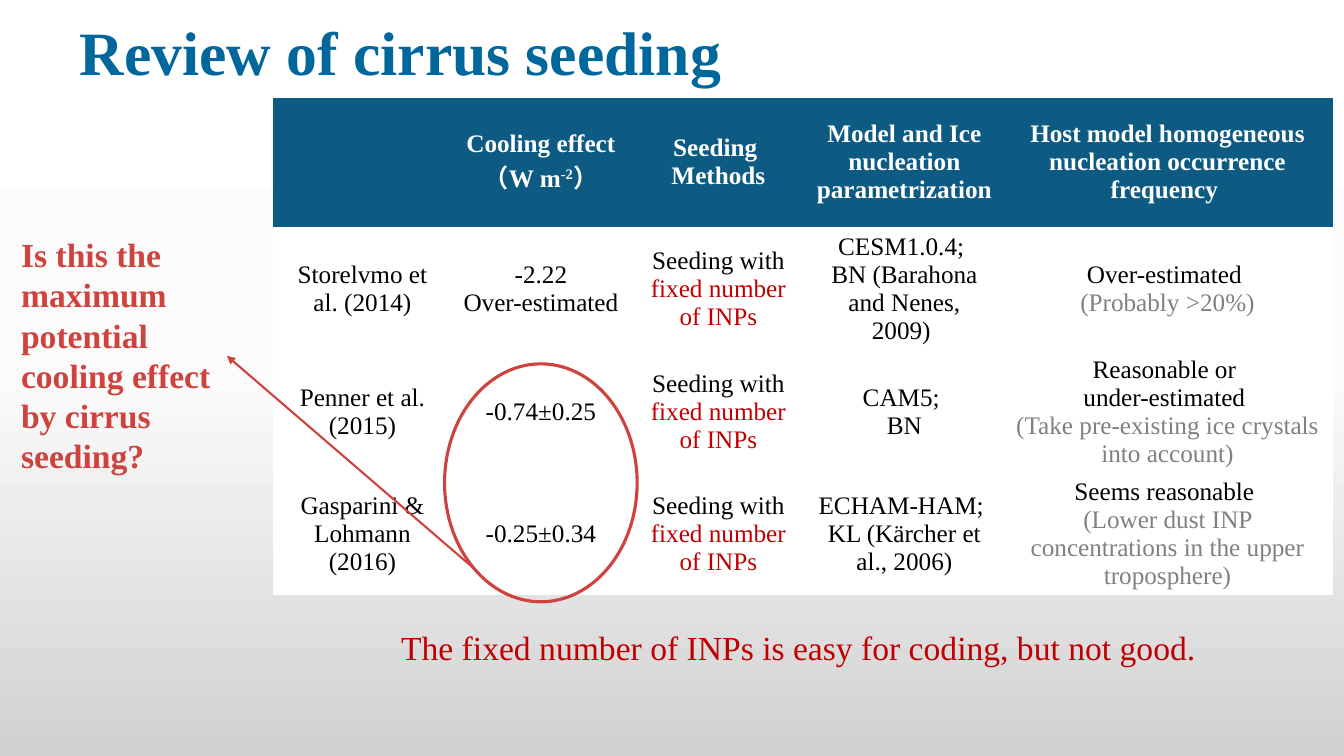
"""Build the cirrus seeding review slide."""
import copy

import pptx
import pptx.dml.color
import pptx.enum.shapes
import pptx.enum.text
import pptx.oxml.ns
import pptx.util
from lxml import etree

COLORS = {
    "title": "00679C", "header": "0D5B82", "white": "FFFFFF", "black": "000000",
    "fixed": "C00000", "note": "808080", "accent": "CF433F", "mid": "FBFBFB", "low": "D1D1D1",
}
NO_GRID_STYLE = "{2D5ABB26-0587-4C30-8999-92F81FD0307C}"
SEEDING = [[("Seeding with ", "black"), ("fixed number of INPs", "fixed")]]
HEADER = [
    [],
    ["Cooling effect", [("（W m", "white"), ("-2", "white", 30000), ("）", "white")]],
    ["Seeding ", "Methods"],
    ["Model and Ice nucleation parametrization"],
    ["Host model homogeneous nucleation occurrence frequency "],
]
STUDIES = [
    [["Storelvmo et al. (2014)"], ["-2.22", "Over-estimated"], SEEDING,
     ["CESM1.0.4; ", "BN (Barahona and Nenes, 2009) "],
     ["Over-estimated ", [("(Probably >20%)", "note")]]],
    [["Penner et al. (2015)"], ["-0.74±0.25"], SEEDING,
     ["CAM5; ", "BN"],
     ["Reasonable or ", "under-estimated ",
      [("(Take pre-existing ice crystals into account)", "note")]]],
    [["Gasparini & Lohmann (2016)"], ["-0.25±0.34"], SEEDING,
     ["ECHAM-HAM; ", "KL (Kärcher et al., 2006)"],
     ["Seems reasonable ",
      [("(Lower dust INP concentrations in the upper troposphere)", "note")]]],
]


def rgb(name):
    return pptx.dml.color.RGBColor.from_string(COLORS[name])


class Deck:
    """Hold the style and current slide on a grid of 100 columns by 100 rows."""

    font = "Times New Roman"

    def __init__(self):
        self.prs = pptx.Presentation()
        self.prs.slide_width = pptx.util.Inches(13.33)
        self.prs.slide_height = pptx.util.Inches(7.5)
        self.s = self.prs.slides.add_slide(self.prs.slide_layouts[5])

    def x(self, cols):
        return round(self.prs.slide_width * cols / 100)

    def y(self, rows):
        return round(self.prs.slide_height * rows / 100)

    def box(self, left, top, width, height):
        return self.x(left), self.y(top), self.x(width), self.y(height)

    def background(self, *names):
        fill = self.s.background.fill
        fill.gradient()
        fill.gradient_angle = 270
        stops = self.s._element.find(".//" + pptx.oxml.ns.qn("a:gsLst"))
        stops.insert(1, copy.deepcopy(stops[0]))
        for i, (stop, name) in enumerate(zip(fill.gradient_stops, names)):
            stop.position = i / (len(names) - 1)
            stop.color.rgb = rgb(name)

    def paragraphs(self, tf, contents, size, color, bold=False, align="LEFT"):
        for i, content in enumerate(contents):
            p = tf.add_paragraph() if i else tf.paragraphs[0]
            p.alignment = pptx.enum.text.PP_ALIGN[align]
            p.font.name, p.font.size, p.font.bold = self.font, pptx.util.Pt(size), bold
            runs = [(content, color)] if isinstance(content, str) else content
            same = len({run[1] for run in runs}) == 1
            if same:
                p.font.color.rgb = rgb(runs[0][1])
            for text, name, *baseline in runs:
                r = p.add_run()
                r.text = text
                if not same:
                    r.font.color.rgb = rgb(name)
                if baseline:
                    r._r.get_or_add_rPr().set("baseline", str(baseline[0]))

    def title(self, text, *place):
        sp = self.s.shapes.title
        sp.left, sp.top, sp.width, sp.height = self.box(*place)
        tf = sp.text_frame
        tf.auto_size = pptx.enum.text.MSO_AUTO_SIZE.NONE
        tf.vertical_anchor = pptx.enum.text.MSO_ANCHOR.MIDDLE
        self.paragraphs(tf, [text], 44, "title", True)
        tf.paragraphs[0].line_spacing = 0.9

    def text(self, text, color, bold, *place):
        tf = self.s.shapes.add_textbox(*self.box(*place)).text_frame
        tf.word_wrap = True
        tf.auto_size = pptx.enum.text.MSO_AUTO_SIZE.SHAPE_TO_FIT_TEXT
        self.paragraphs(tf, [text], 24, color, bold)

    def table(self, left, top, widths, heights, rows):
        place = self.box(left, top, sum(widths), sum(heights))
        table = self.s.shapes.add_table(len(rows), len(widths), *place).table
        table.first_row = table.horz_banding = False
        table._tbl.tblPr.find(pptx.oxml.ns.qn("a:tableStyleId")).text = NO_GRID_STYLE
        for column, width in zip(table.columns, widths):
            column.width = self.x(width)
        for i, (row, height) in enumerate(zip(table.rows, heights)):
            row.height = self.y(height)
            fill, ink = ("white", "black") if i else ("header", "white")
            for cell, content in zip(row.cells, rows[i]):
                cell.fill.solid()
                cell.fill.fore_color.rgb = rgb(fill)
                cell.vertical_anchor = pptx.enum.text.MSO_ANCHOR.MIDDLE
                self.paragraphs(cell.text_frame, content, 18, ink, i == 0, "CENTER")

    def stroke(self, line, width):
        line.color.rgb = rgb("accent")
        line.width = pptx.util.Pt(width)

    def arrow(self, x1, y1, x2, y2):
        kind = pptx.enum.shapes.MSO_CONNECTOR.STRAIGHT
        line = self.s.shapes.add_connector(kind, self.x(x1), self.y(y1), self.x(x2), self.y(y2))
        self.stroke(line.line, 1.5)
        qn = pptx.oxml.ns.qn
        ln = line._element.spPr.find(qn("a:ln"))
        etree.SubElement(ln, qn("a:tailEnd"), type="triangle")
        etree.SubElement(line._element.spPr, qn("a:effectLst"))

    def ellipse(self, *place):
        sp = self.s.shapes.add_shape(pptx.enum.shapes.MSO_SHAPE.OVAL, *self.box(*place))
        sp.shadow.inherit = False
        sp.fill.background()
        self.stroke(sp.line, 2.25)


def main():
    deck = Deck()
    deck.background("white", "mid", "low")
    deck.title("Review of cirrus seeding", 5.18, 0.67, 86.27, 13.47)
    deck.table(20.33, 12.93, [13.28, 13.28, 13.13, 14.55, 24.61],
               [17.07, 16.4, 16.13, 16.13], [HEADER] + STUDIES)
    deck.text("The fixed number of INPs is easy for coding, but not good.",
              "fixed", False, 29.11, 82.27, 66.09, 6.67)
    deck.arrow(35.18, 75.07, 16.88, 47.07)
    deck.ellipse(33.08, 48.13, 14.33, 31.47)
    deck.text("Is this the maximum potential cooling effect by cirrus seeding?",
              "accent", True, 0.83, 30.27, 16.05, 33.6)
    deck.prs.save("out.pptx")


if __name__ == "__main__":
    main()
